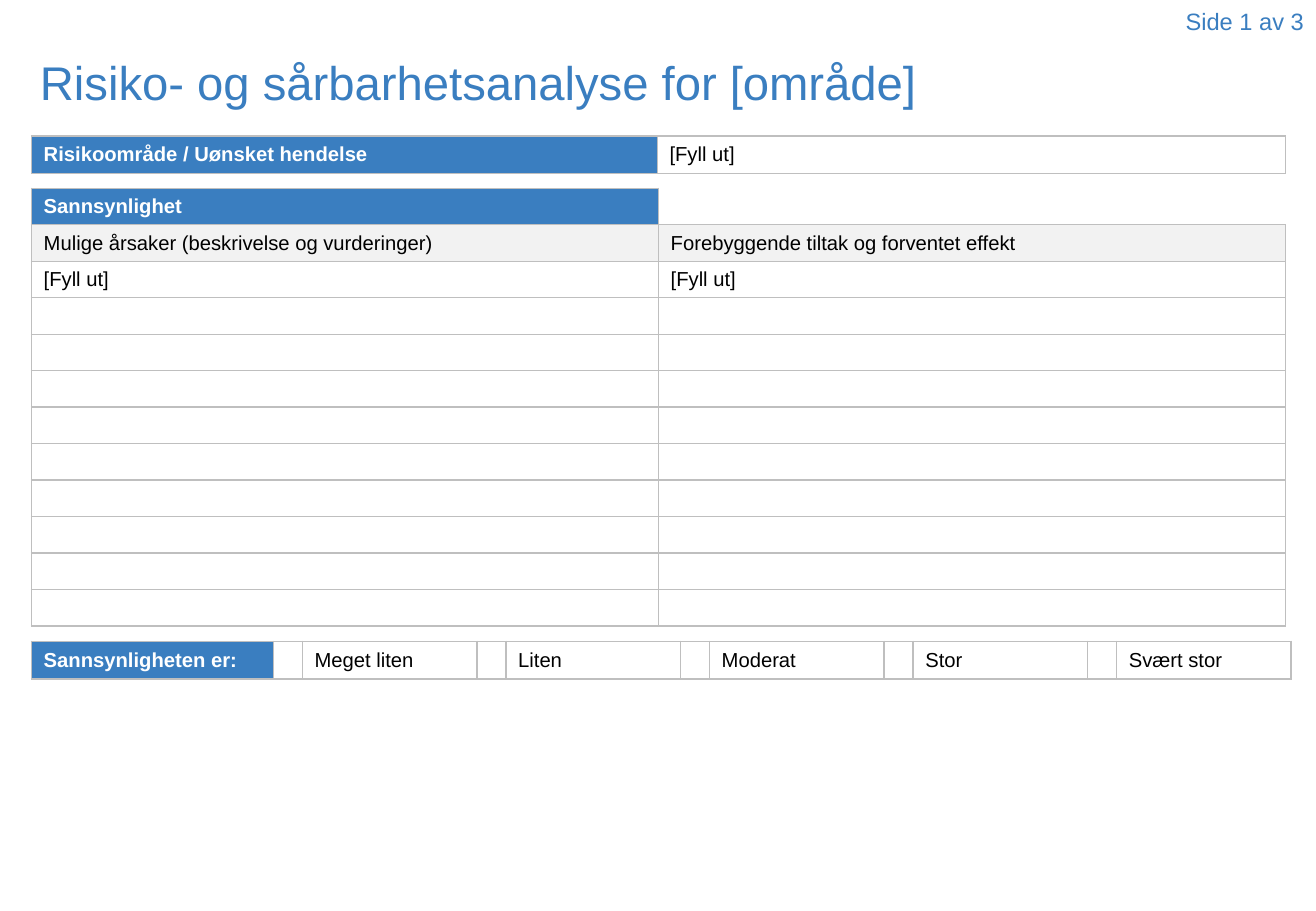
from dataclasses import dataclass

from lxml.etree import SubElement
from pptx import Presentation
from pptx.dml.color import RGBColor
from pptx.enum.text import MSO_ANCHOR, PP_ALIGN
from pptx.oxml.ns import qn
from pptx.util import Inches, Pt

COLORS = {"blue": "3A7EC0", "white": "FFFFFF", "black": "000000", "gray": "F2F2F2", "border": "BFBFBF"}
FONT = "Arial"
GRID_COLUMNS, GRID_ROWS = 1083, 750
PAGE_WIDTH, PAGE_HEIGHT = Inches(10.83), Inches(7.5)
TABLE_LEFT = 26
ALL_SIDES = "LRTB"


@dataclass(frozen=True)
class Label:
    text: str
    left: float
    top: float
    width: float
    height: float
    size: int
    align: PP_ALIGN = PP_ALIGN.LEFT
    anchor: MSO_ANCHOR = MSO_ANCHOR.TOP


@dataclass(frozen=True)
class Cell:
    text: str = ""
    fill: str = "white"
    color: str = "black"
    bold: bool = False
    sides: str = ALL_SIDES


@dataclass(frozen=True)
class Grid:
    top: float
    columns: list[float]
    row_height: float
    rows: list[list[Cell]]


def header(text: str) -> Cell:
    return Cell(text, "blue", "white", True)


def across(columns: float) -> int:
    return round(PAGE_WIDTH * columns / GRID_COLUMNS)


def down(rows: float) -> int:
    return round(PAGE_HEIGHT * rows / GRID_ROWS)


def rgb(name: str) -> RGBColor:
    return RGBColor.from_string(COLORS[name])


def style_paragraph(para, size: int, color: str, bold: bool = False) -> None:
    para.font.name = FONT
    para.font.size = Pt(size)
    para.font.bold = bold
    para.font.color.rgb = rgb(color)


def draw_label(page, label: Label) -> None:
    box = page.shapes.add_textbox(
        across(label.left), down(label.top), across(label.width), down(label.height)
    )
    frame = box.text_frame
    frame.word_wrap = True
    frame.vertical_anchor = label.anchor
    para = frame.paragraphs[0]
    para.text = label.text
    para.alignment = label.align
    style_paragraph(para, label.size, "blue")


def draw_borders(cell, sides: str) -> None:
    properties = cell._tc.get_or_add_tcPr()
    for side in ALL_SIDES:
        line = SubElement(properties, qn(f"a:ln{side}"), w=str(Pt(1)))
        if side in sides:
            fill = SubElement(line, qn("a:solidFill"))
            SubElement(fill, qn("a:srgbClr"), val=COLORS["border"])
        else:
            SubElement(line, qn("a:noFill"))


def draw_cell(cell, content: Cell) -> None:
    draw_borders(cell, content.sides)
    cell.fill.solid()
    cell.fill.fore_color.rgb = rgb(content.fill)
    cell.vertical_anchor = MSO_ANCHOR.MIDDLE
    para = cell.text_frame.paragraphs[0]
    if content.text:
        para.text = content.text
        style_paragraph(para, 12, content.color, content.bold)
    else:
        SubElement(para._p, qn("a:endParaRPr"), sz="1200")


def draw_grid(page, grid: Grid) -> None:
    frame = page.shapes.add_table(
        len(grid.rows), len(grid.columns), across(TABLE_LEFT), down(grid.top),
        across(sum(grid.columns)), down(grid.row_height * len(grid.rows)),
    )
    table = frame.table
    table.first_row = False
    table.horz_banding = False
    for column, width in zip(table.columns, grid.columns):
        column.width = across(width)
    for row, contents in zip(table.rows, grid.rows):
        row.height = down(grid.row_height)
        for cell, content in zip(row.cells, contents):
            draw_cell(cell, content)


LABELS = [
    Label("Risiko- og sårbarhetsanalyse for [område]", 23, 37, 1039, 61, 28, anchor=MSO_ANCHOR.MIDDLE),
    Label("Side 1 av 3", 919, 1, 164, 57, 14, align=PP_ALIGN.RIGHT),
]
LEVELS = ["Meget liten", "Liten", "Moderat", "Stor", "Svært stor"]
FILL_IN = Cell("[Fyll ut]")
EMPTY_ROWS = 9

GRIDS = [
    Grid(112, [515, 517], 31, [[header("Risikoområde / Uønsket hendelse"), FILL_IN]]),
    Grid(155, [516, 516], 26, [
        [header("Sannsynlighet"), Cell(sides="LB")],
        [
            Cell("Mulige årsaker (beskrivelse og vurderinger)", "gray"),
            Cell("Forebyggende tiltak og forventet effekt", "gray"),
        ],
        [FILL_IN, FILL_IN],
        *[[Cell(), Cell()] for _ in range(EMPTY_ROWS)],
    ]),
    Grid(528, [199] + [23.75, 143.6] * len(LEVELS), 31, [
        [header("Sannsynligheten er:")]
        + [cell for level in LEVELS for cell in (Cell(), Cell(level))]
    ]),
]


def main() -> None:
    deck = Presentation()
    deck.slide_width, deck.slide_height = PAGE_WIDTH, PAGE_HEIGHT
    page = deck.slides.add_slide(deck.slide_layouts[6])
    for label in LABELS:
        draw_label(page, label)
    for grid in GRIDS:
        draw_grid(page, grid)
    deck.save("out.pptx")


if __name__ == "__main__":
    main()
